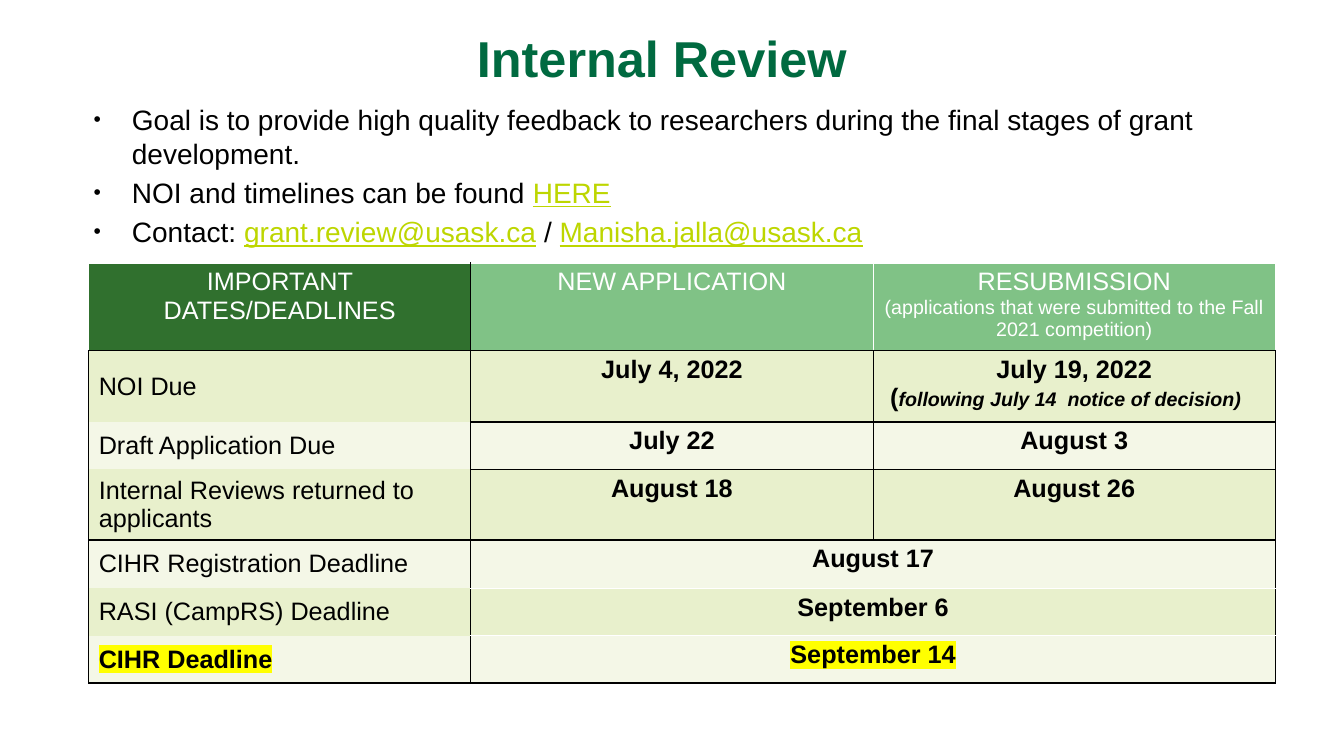
from lxml import etree
from pptx import Presentation
from pptx import util as u
from pptx.dml.color import RGBColor
from pptx.enum import text
from pptx.oxml import ns

PX = 9144  # 100 px to the inch
FONT = "Arial"
BLACK = RGBColor(0x00, 0x00, 0x00)
WHITE = RGBColor(0xFF, 0xFF, 0xFF)
TITLE_GREEN = RGBColor(0x00, 0x6A, 0x40)
LINK_GREEN = RGBColor(0xBD, 0xD6, 0x00)
HEAD_DARK = RGBColor(0x30, 0x70, 0x2E)
HEAD_LIGHT = RGBColor(0x80, 0xC2, 0x86)
BAND_DARK = RGBColor(0xE8, 0xF0, 0xCC)
BAND_LIGHT = RGBColor(0xF4, 0xF7, 0xE7)
YELLOW = RGBColor(0xFF, 0xFF, 0x00)

# Each bullet is a list of (words, is link)
BULLETS = [
    [("Goal is to provide high quality feedback to researchers during the "
      "final stages of grant development.", False)],
    [("NOI and timelines can be found ", False), ("HERE", True)],
    [("Contact: ", False), ("grant.review@usask.ca", True), (" / ", False),
     ("Manisha.jalla@usask.ca", True)],
]
COLUMNS = [379, 399, 399]
ROWS = [84, 71, 47, 68, 48, 47, 47]
HEADS = ["IMPORTANT DATES/DEADLINES", "NEW APPLICATION", "RESUBMISSION"]
HEAD_NOTE = "(applications that were submitted to the Fall 2021 competition)"
NOI_NOTE = "following July 14  notice of decision)"
DEADLINES = [  # one date spans both application columns
    ("NOI Due", "July 4, 2022", "July 19, 2022"),
    ("Draft Application Due", "July 22", "August 3"),
    ("Internal Reviews returned to applicants", "August 18", "August 26"),
    ("CIHR Registration Deadline", "August 17"),
    ("RASI (CampRS) Deadline", "September 6"),
    ("CIHR Deadline", "September 14"),
]
FIRST_SHARED = 4
LAST = len(DEADLINES)


def px(*lengths):
    return [u.Emu(length * PX) for length in lengths]


def add_span(para, words, size, color=BLACK, bold=False, italic=False):
    span = para.add_run()
    span.text = words
    font = span.font
    font.name, font.size = FONT, u.Pt(size)
    font.bold, font.italic = bold, italic
    font.color.rgb = color
    return span


def highlight(span):
    fill = span.font._element.find(ns.qn("a:solidFill"))
    mark = etree.Element(ns.qn("a:highlight"))
    etree.SubElement(mark, ns.qn("a:srgbClr"), val=str(YELLOW))
    fill.addnext(mark)


def add_bullet(para):
    props = para._p.get_or_add_pPr()
    props.set("marL", str(88 * PX))
    props.set("indent", str(-38 * PX))
    etree.SubElement(props, ns.qn("a:buSzPct"), val="75000")
    etree.SubElement(props, ns.qn("a:buFont"), typeface=FONT)
    etree.SubElement(props, ns.qn("a:buChar"), char="•")


def set_borders(cell, colors):
    """colors holds left, right, top and bottom; None draws no line."""
    props = cell._tc.get_or_add_tcPr()
    for side, color in zip("LRTB", colors):
        line = etree.SubElement(props, ns.qn("a:ln" + side), w=str(u.Pt(1)))
        if color is None:
            etree.SubElement(line, ns.qn("a:noFill"))
        else:
            fill = etree.SubElement(line, ns.qn("a:solidFill"))
            etree.SubElement(fill, ns.qn("a:srgbClr"), val=str(color))


def border_colors(row, column):
    if row == 0:
        return (BLACK if column == 1 else WHITE,
                BLACK if column == 0 else WHITE, WHITE, BLACK)
    if column == 0:
        return (BLACK, BLACK, BLACK if row in (1, FIRST_SHARED) else None,
                BLACK if row in (FIRST_SHARED - 1, LAST) else None)
    if row < FIRST_SHARED:
        return (BLACK,) * 4
    return (BLACK, BLACK, BLACK if row == FIRST_SHARED else WHITE,
            BLACK if row == LAST else WHITE)


def fill_color(row, column):
    if row == 0:
        return HEAD_LIGHT if column else HEAD_DARK
    return BAND_DARK if row % 2 else BAND_LIGHT


def write_cell(cell, words, color=BLACK, bold=False, centered=True):
    para = cell.text_frame.paragraphs[0]
    if centered:
        para.alignment = text.PP_ALIGN.CENTER
    else:
        cell.vertical_anchor = text.MSO_ANCHOR.MIDDLE
    return add_span(para, words, 18, color, bold)


def add_title(page):
    title = page.shapes.title
    title.left, title.top, title.width, title.height = px(33, 22, 1247, 67)
    frame = title.text_frame
    frame.vertical_anchor = text.MSO_ANCHOR.TOP
    para = frame.paragraphs[0]
    para.alignment = text.PP_ALIGN.CENTER
    add_span(para, "Internal Review", 36, TITLE_GREEN, bold=True)


def add_bullets(page):
    box = page.shapes.add_textbox(*px(33, 97, 1247, 491))
    frame = box.text_frame
    frame.word_wrap = True
    for index, pieces in enumerate(BULLETS):
        para = frame.paragraphs[0] if index == 0 else frame.add_paragraph()
        add_bullet(para)
        if index:
            para.space_before = u.Pt(4)
        for words, is_link in pieces:
            span = add_span(para, words, 20, LINK_GREEN if is_link else BLACK)
            span.font.underline = is_link


def add_deadlines(page):
    frame = page.shapes.add_table(len(ROWS), len(COLUMNS),
                                  *px(88, 261, sum(COLUMNS), sum(ROWS)))
    table = frame.table
    for column, width in zip(table.columns, px(*COLUMNS)):
        column.width = width
    for row, height in zip(table.rows, px(*ROWS)):
        row.height = height

    # Borders and fills
    for row in range(len(ROWS)):
        for column in range(len(COLUMNS)):
            cell = table.cell(row, column)
            set_borders(cell, border_colors(row, column))
            cell.fill.solid()
            cell.fill.fore_color.rgb = fill_color(row, column)

    # Header row
    for column, words in enumerate(HEADS):
        write_cell(table.cell(0, column), words, WHITE)
    para = table.cell(0, 2).text_frame.add_paragraph()
    para.alignment = text.PP_ALIGN.CENTER
    add_span(para, HEAD_NOTE, 14, WHITE)

    # Deadline rows
    for row, (label, *dates) in enumerate(DEADLINES, start=1):
        if len(dates) == 1:
            table.cell(row, 1).merge(table.cell(row, 2))
        spans = [write_cell(table.cell(row, 0), label, bold=row == LAST,
                            centered=False)]
        for column, date in enumerate(dates, start=1):
            spans.append(write_cell(table.cell(row, column), date, bold=True))
        if row == LAST:
            for span in spans:
                highlight(span)
    para = table.cell(1, 2).text_frame.add_paragraph()
    add_span(para, " (", 18, bold=True)
    add_span(para, NOI_NOTE, 14, bold=True, italic=True)


def main():
    deck = Presentation()
    deck.slide_width, deck.slide_height = px(1333, 750)
    page = deck.slides.add_slide(deck.slide_layouts[5])
    add_title(page)
    add_bullets(page)
    add_deadlines(page)
    deck.save("out.pptx")


if __name__ == "__main__":
    main()
